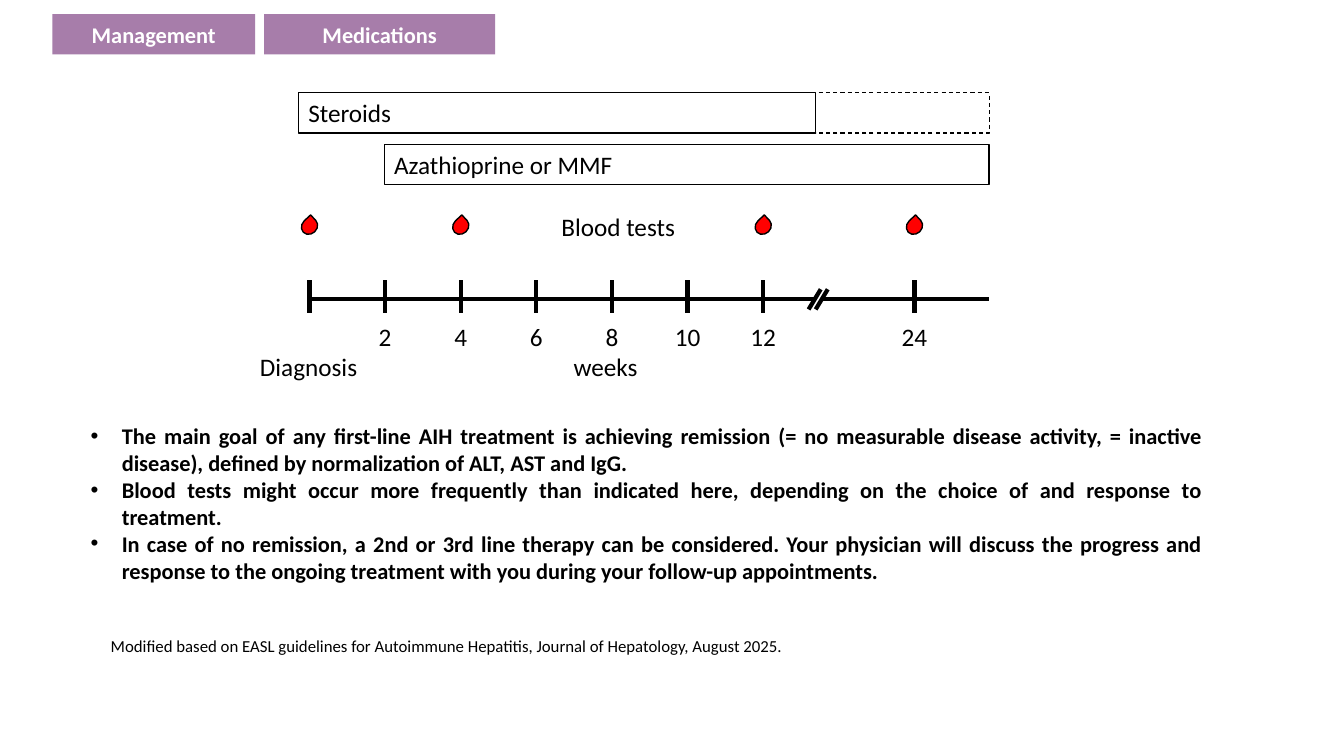
from dataclasses import dataclass

from lxml import etree
from pptx import Presentation
from pptx.dml.color import RGBColor
from pptx.enum import dml, shapes, text
from pptx.oxml import ns
from pptx.util import Inches, Pt


@dataclass(frozen=True)
class Theme:
    font: str = "Calibri"
    black: RGBColor = RGBColor(0, 0, 0)
    white: RGBColor = RGBColor(255, 255, 255)
    purple: RGBColor = RGBColor(0xA7, 0x7D, 0xAA)
    blood: RGBColor = RGBColor(255, 0, 0)
    diagram_size: int = 18
    body_size: int = 16
    source_size: int = 12
    axis_width: float = 3
    drop_width: float = 1
    bar_width: float = 0.75


THEME = Theme()

# Label, left, width
TABS = [("Management", 0.52, 2.01), ("Medications", 2.62, 2.29)]
# Label, left, top, width, dashed
TREATMENTS = [
    ("Steroids", 2.96, 0.92, 5.13, False),
    ("", 8.09, 0.92, 1.72, True),
    ("Azathioprine or MMF", 3.81, 1.43, 6.0, False),
]
# Week shown at each position on the time axis
WEEKS = {1: "2", 2: "4", 3: "6", 4: "8", 5: "10", 6: "12", 8: "24"}
BLOOD_TEST_POSITIONS = [0, 2, 6, 8]
# Label, left, top, width
CAPTIONS = [
    ("Blood tests", 5.47, 2.05, 1.4),
    ("Diagnosis", 2.48, 3.44, 1.18),
    ("weeks", 5.59, 3.44, 0.9),
]
POINTS = [
    "The main goal of any first-line AIH treatment is achieving remission (= no measurable "
    "disease activity, = inactive disease), defined by normalization of ALT, AST and IgG.",
    "Blood tests might occur more frequently than indicated here, depending on the choice of "
    "and response to treatment.",
    "In case of no remission, a 2nd or 3rd line therapy can be considered. Your physician will "
    "discuss the progress and response to the ongoing treatment with you during your "
    "follow-up appointments.",
]
SOURCE = ("Modified based on EASL guidelines for Autoimmune Hepatitis, "
          "Journal of Hepatology, August 2025.")

AXIS_LEFT, AXIS_BREAK, AXIS_RIGHT, AXIS_Y = 3.07, 8.08, 9.81, 2.97
BREAK_GAP = 0.06
TICK_STEP, TICK_TOP, TICK_HEIGHT = 0.75, 2.78, 0.33
ROW_HEIGHT = 0.4


def tick_x(position):
    return AXIS_LEFT + position * TICK_STEP


def style_paragraph(paragraph, size, color=THEME.black, bold=False, align=None):
    paragraph.alignment = align
    font = paragraph.font
    font.name, font.size, font.bold = THEME.font, Pt(size), bold
    font.color.rgb = color


def add_shape(slide, kind, left, top, width, height, fill=None, line_width=None):
    shape = slide.shapes.add_shape(
        kind, Inches(left), Inches(top), Inches(width), Inches(height))
    shape.shadow.inherit = False
    if fill is None:
        shape.fill.background()
    else:
        shape.fill.solid()
        shape.fill.fore_color.rgb = fill
    if line_width is None:
        shape.line.fill.background()
    else:
        shape.line.color.rgb = THEME.black
        shape.line.width = Pt(line_width)
    return shape


def add_label(slide, label, left, top, width, height=ROW_HEIGHT,
              size=THEME.diagram_size, align=None):
    box = slide.shapes.add_textbox(
        Inches(left), Inches(top), Inches(width), Inches(height))
    box.text_frame.word_wrap = False
    paragraph = box.text_frame.paragraphs[0]
    paragraph.text = label
    style_paragraph(paragraph, size, align=align)


def add_line(slide, x1, y1, x2, y2):
    line = slide.shapes.add_connector(
        shapes.MSO_CONNECTOR.STRAIGHT, Inches(x1), Inches(y1), Inches(x2), Inches(y2))
    line.line.color.rgb = THEME.black
    line.line.width = Pt(THEME.axis_width)
    properties = line._element.find(ns.qn("p:spPr"))
    etree.SubElement(properties, ns.qn("a:effectLst"))


def add_tabs(slide):
    for label, left, width in TABS:
        tab = add_shape(slide, shapes.MSO_SHAPE.RECTANGLE, left, 0.14, width,
                        ROW_HEIGHT, fill=THEME.purple)
        tab.text_frame.text = label
        style_paragraph(tab.text_frame.paragraphs[0], THEME.body_size, THEME.white,
                        True, text.PP_ALIGN.CENTER)


def add_treatments(slide):
    for label, left, top, width, dashed in TREATMENTS:
        bar = add_shape(slide, shapes.MSO_SHAPE.RECTANGLE, left, top, width,
                        ROW_HEIGHT, line_width=THEME.bar_width)
        if dashed:
            bar.line.dash_style = dml.MSO_LINE.DASH
        if label:
            bar.text_frame.text = label
            style_paragraph(bar.text_frame.paragraphs[0], THEME.diagram_size,
                            align=text.PP_ALIGN.LEFT)


def add_timeline(slide):
    add_line(slide, AXIS_LEFT, AXIS_Y, AXIS_BREAK, AXIS_Y)
    add_line(slide, AXIS_BREAK + BREAK_GAP, AXIS_Y, AXIS_RIGHT, AXIS_Y)
    for left in (8.02, 8.09):
        add_line(slide, left + 0.12, AXIS_Y - 0.1, left, AXIS_Y + 0.1)
    for position in (0, *WEEKS):
        x = tick_x(position)
        add_line(slide, x, TICK_TOP, x, TICK_TOP + TICK_HEIGHT)
    label_width = 0.46
    for position, week in WEEKS.items():
        add_label(slide, week, tick_x(position) - label_width / 2, 3.14, label_width,
                  align=text.PP_ALIGN.CENTER)


def add_blood_tests(slide):
    width, height = 0.17, 0.15
    for position in BLOOD_TEST_POSITIONS:
        drop = add_shape(slide, shapes.MSO_SHAPE.TEAR, tick_x(position) - width / 2, 2.17,
                         width, height, THEME.blood, THEME.drop_width)
        drop.rotation = 316.7


def add_points(slide):
    box = slide.shapes.add_textbox(Inches(0.8), Inches(4.14), Inches(11.23), Inches(1.72))
    frame = box.text_frame
    frame.word_wrap = True
    frame.text = "\n".join(POINTS)
    indent = Inches(0.31)
    for paragraph in frame.paragraphs:
        properties = paragraph._p.get_or_add_pPr()
        properties.set("marL", str(indent))
        properties.set("indent", str(-indent))
        etree.SubElement(properties, ns.qn("a:buFont"), typeface="Arial")
        etree.SubElement(properties, ns.qn("a:buChar"), char="•")
        style_paragraph(paragraph, THEME.body_size, bold=True, align=text.PP_ALIGN.JUSTIFY)


def main():
    presentation = Presentation()
    presentation.slide_width, presentation.slide_height = Inches(13.33), Inches(7.5)
    blank_layout = presentation.slide_layouts.get_by_name("Blank")
    slide = presentation.slides.add_slide(blank_layout)
    add_tabs(slide)
    add_treatments(slide)
    add_blood_tests(slide)
    add_timeline(slide)
    for label, left, top, width in CAPTIONS:
        add_label(slide, label, left, top, width)
    add_points(slide)
    add_label(slide, SOURCE, 1, 6.26, 6.9, 0.3, THEME.source_size)
    presentation.save("out.pptx")


if __name__ == "__main__":
    main()
